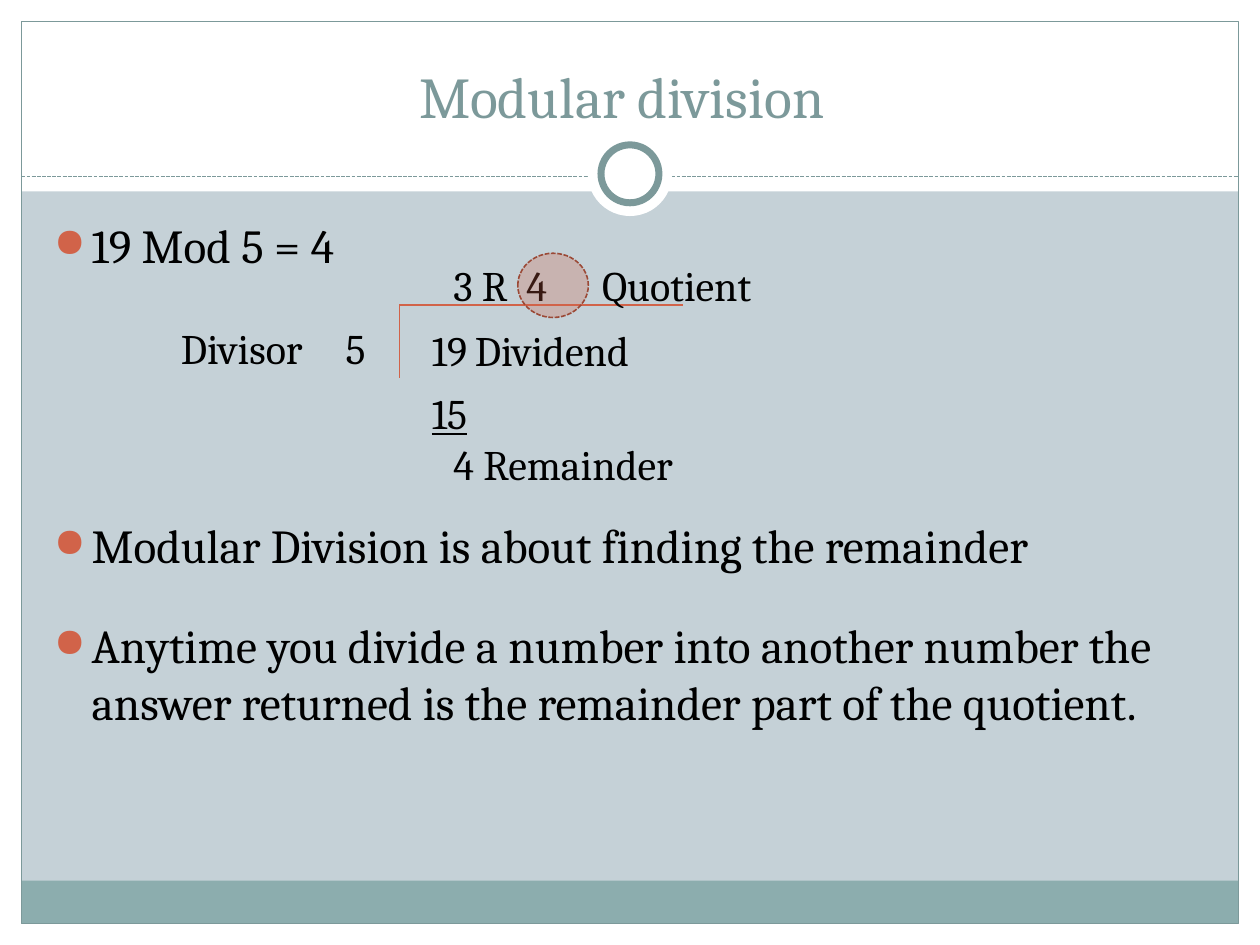
import pptx
import pptx.util
import pptx.dml.color
import pptx.enum.dml
import pptx.enum.shapes
import pptx.enum.text
import pptx.oxml
import pptx.oxml.ns

WIDTH, HEIGHT = 10, 7.5
MARGIN = 0.17
HEADER = 1.52
RULE_Y = 1.4
FOOTER = 0.34
FONT = "Cambria"
WHITE, BLACK, TEAL, RUST = "FFFFFF", "000000", "7C999A", "D16349"

TITLE = "Modular division"
POINTS = [
    ("19 Mod 5 = 4", 0),
    ("Modular Division is about finding the remainder", 139),
    ("Anytime you divide a number into another number the answer "
     "returned is the remainder part of the quotient.", 24.5),
]
ROWS = {"quotient": 2.01, "divisor": 2.51, "dividend": 2.53, "product": 3.03, "remainder": 3.43}
DIVISION = [
    ("3 R", "quotient", 3.5, 0.8, {}),
    ("4", "quotient", 4.08, 0.5, {}),
    ("Quotient", "quotient", 4.68, 2.15, {}),
    ("Divisor", "divisor", 0.83, 1.67, {"align": "RIGHT"}),
    ("5", "divisor", 2.4, 0.6, {"align": "RIGHT"}),
    ("19", "dividend", 3.33, 0.6, {}),
    ("Dividend", "dividend", 3.67, 1.9, {}),
    ("15", "product", 3.33, 2.25, {"underline": True}),
    ("4 Remainder", "remainder", 3.5, 3.08, {}),
]
BRACKET_CORNER = (3.17, 2.42)
BRACKET_ENDS = [(3.17, 3), (5.42, 2.42)]

deck = pptx.Presentation()
deck.slide_width = pptx.util.Inches(WIDTH)
deck.slide_height = pptx.util.Inches(HEIGHT)
slide = deck.slides.add_slide(deck.slide_layouts[6])


def colour(value):
    return pptx.dml.color.RGBColor.from_string(value)


def inches(*lengths):
    return [pptx.util.Inches(length) for length in lengths]


def add_xml(parent, tag, **attributes):
    child = pptx.oxml.parse_xml(f'<a:{tag} {pptx.oxml.ns.nsdecls("a")}/>')
    for name, value in attributes.items():
        child.set(name, value)
    parent.append(child)
    return child


def style_line(line, stroke, weight, dashed=False):
    line.color.rgb = colour(stroke)
    line.width = pptx.util.Pt(weight)
    if dashed:
        line.dash_style = pptx.enum.dml.MSO_LINE.SQUARE_DOT


def add_figure(kind, box, fill=None, stroke=None, weight=0.75, dashed=False, opacity=None):
    figure = slide.shapes.add_shape(getattr(pptx.enum.shapes.MSO_SHAPE, kind), *inches(*box))
    figure.shadow.inherit = False
    if fill:
        figure.fill.solid()
        figure.fill.fore_color.rgb = colour(fill)
    else:
        figure.fill.background()
    if opacity:
        tint = figure.fill._xPr.find(".//" + pptx.oxml.ns.qn("a:srgbClr"))
        add_xml(tint, "alpha", val=str(opacity * 1000))
    if stroke:
        style_line(figure.line, stroke, weight, dashed)
    else:
        figure.line.fill.background()


def add_line(start, end, stroke, dashed=False):
    rule = slide.shapes.add_connector(
        pptx.enum.shapes.MSO_CONNECTOR.STRAIGHT, *inches(*start, *end))
    style_line(rule.line, stroke, 0.75, dashed)
    add_xml(rule._element.spPr, "effectLst")


def add_text(paragraphs, box, size=24, ink=BLACK, align="LEFT", anchor="TOP",
             underline=None, bullet=None):
    frame = slide.shapes.add_textbox(*inches(*box)).text_frame
    frame.word_wrap = True
    frame.vertical_anchor = getattr(pptx.enum.text.MSO_ANCHOR, anchor)
    for index, (words, gap) in enumerate(paragraphs):
        paragraph = frame.add_paragraph() if index else frame.paragraphs[0]
        paragraph.alignment = getattr(pptx.enum.text.PP_ALIGN, align)
        paragraph.space_before = pptx.util.Pt(gap)
        run = paragraph.add_run()
        run.text = words
        run.font.name = FONT
        run.font.size = pptx.util.Pt(size)
        run.font.color.rgb = colour(ink)
        run.font.underline = underline
        if bullet:
            properties = paragraph._p.get_or_add_pPr()
            indent = pptx.util.Inches(0.3)
            properties.set("marL", str(indent))
            properties.set("indent", str(-indent))
            add_xml(add_xml(properties, "buClr"), "srgbClr", val=bullet)
            add_xml(properties, "buSzPct", val="85000")
            add_xml(properties, "buChar", char="●")


def add_circle(diameter, **style):
    centre_x, centre_y = WIDTH / 2, 1.38
    add_figure("OVAL", (centre_x - diameter / 2, centre_y - diameter / 2, diameter, diameter),
               fill=WHITE, **style)


slide.background.fill.solid()
slide.background.fill.fore_color.rgb = colour("C5D1D7")

inner_width, inner_height = WIDTH - 2 * MARGIN, HEIGHT - 2 * MARGIN
for border in [
    (0, HEIGHT - MARGIN, WIDTH, MARGIN),
    (0, 0, WIDTH, HEADER),
    (0, 0, MARGIN, HEIGHT),
    (WIDTH - MARGIN, 0, MARGIN, HEIGHT),
]:
    add_figure("RECTANGLE", border, fill=WHITE)
add_figure("RECTANGLE", (MARGIN, HEIGHT - MARGIN - FOOTER, inner_width, FOOTER), fill="8CADAE")
add_figure("RECTANGLE", (MARGIN, MARGIN, inner_width, inner_height), stroke=TEAL)
add_line((MARGIN, RULE_Y), (WIDTH - MARGIN, RULE_Y), TEAL, dashed=True)
add_circle(0.67)
add_circle(0.46, stroke=TEAL, weight=4)

add_text([(TITLE, 0)], (0.27, 0.25, 9.33, 0.83), size=33, ink=TEAL,
         align="CENTER", anchor="BOTTOM")
add_text(POINTS, (0.33, 1.67, 9.3, 5), size=27, bullet=RUST)

for bracket_end in BRACKET_ENDS:
    add_line(BRACKET_CORNER, bracket_end, RUST)
for words, row, left, width, style in DIVISION:
    add_text([(words, 0)], (left, ROWS[row], width, 0.5), **style)
add_figure("OVAL", (4.11, 2.01, 0.56, 0.51), fill=RUST, opacity=27,
           stroke="9B4936", weight=0.9, dashed=True)

deck.save("out.pptx")
